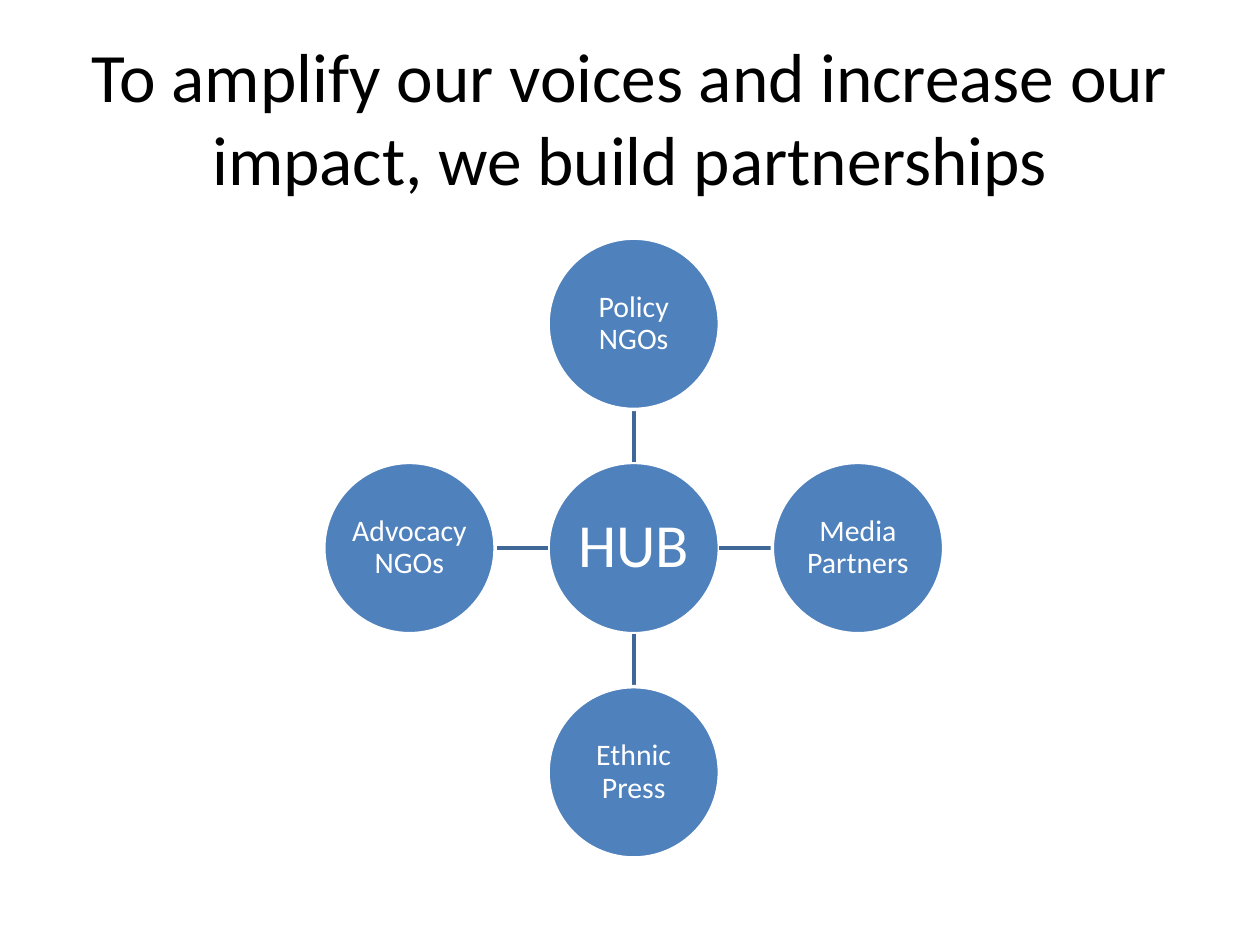
from dataclasses import dataclass

from lxml.etree import SubElement
from pptx import Presentation
from pptx.dml.color import RGBColor
from pptx.enum.shapes import MSO_CONNECTOR as Connector, MSO_SHAPE as Preset
from pptx.enum.text import MSO_ANCHOR as Anchor, PP_ALIGN as Align
from pptx.oxml.ns import qn
from pptx.slide import Slide
from pptx.text.text import TextFrame
from pptx.util import Inches, Pt

BLACK = RGBColor(0x00, 0x00, 0x00)
WHITE = RGBColor(0xFF, 0xFF, 0xFF)
BLUE = RGBColor(0x4F, 0x81, 0xBD)
DARK_BLUE = RGBColor(0x3F, 0x67, 0x97)

HUB_X, HUB_Y = 5.03, 4.35
DIAMETER = 1.36
RADIUS = DIAMETER / 2
PITCH = 1.78
LINE_WIDTH = Pt(2)


@dataclass(frozen=True)
class Node:
    """A circle placed by column and row steps from the hub."""

    label: str
    column: int
    row: int
    size: float = 17
    inset: float = 0.01


HUB = Node("HUB", 0, 0, size=35, inset=0.02)
PARTNERS = (
    Node("Policy NGOs", 0, -1),
    Node("Media Partners", 1, 0),
    Node("Ethnic Press", 0, 1),
    Node("Advocacy NGOs", -1, 0),
)


def write(frame: TextFrame, text: str, size: float, color: RGBColor) -> None:
    """Put one centred paragraph into a wrapping frame."""
    frame.text = text
    frame.word_wrap = True
    frame.vertical_anchor = Anchor.MIDDLE
    para = frame.paragraphs[0]
    para.alignment = Align.CENTER
    font = para.runs[0].font
    font.name, font.size, font.color.rgb = "Calibri", Pt(size), color


def draw_title(page: Slide, text: str) -> None:
    """Draw the heading across the top of the page."""
    box = page.shapes.add_textbox(Inches(0.5), Inches(0.3), Inches(9), Inches(1.25))
    write(box.text_frame, text, 39.6, BLACK)


def draw_node(page: Slide, node: Node) -> None:
    """Draw a labelled circle at its grid position."""
    left = HUB_X + node.column * PITCH - RADIUS
    top = HUB_Y + node.row * PITCH - RADIUS
    circle = page.shapes.add_shape(
        Preset.OVAL, Inches(left), Inches(top), Inches(DIAMETER), Inches(DIAMETER)
    )
    circle.shadow.inherit = False
    circle.fill.solid()
    circle.fill.fore_color.rgb = BLUE
    circle.line.color.rgb = WHITE
    circle.line.width = LINE_WIDTH
    frame = circle.text_frame
    write(frame, node.label, node.size, WHITE)
    frame.paragraphs[0].line_spacing = 0.9
    frame.margin_left = frame.margin_right = Inches(node.inset)
    frame.margin_top = frame.margin_bottom = Inches(node.inset)


def draw_spoke(page: Slide, node: Node) -> None:
    """Draw the line from the hub's edge to a partner's edge."""
    start, end = (
        (Inches(HUB_X + node.column * reach), Inches(HUB_Y + node.row * reach))
        for reach in (RADIUS, PITCH - RADIUS)
    )
    spoke = page.shapes.add_connector(Connector.STRAIGHT, *start, *end)
    spoke.line.color.rgb = DARK_BLUE
    spoke.line.width = LINE_WIDTH
    SubElement(spoke._element.spPr, qn("a:effectLst"))


def main() -> None:
    """Build the partnership slide and save it."""
    deck = Presentation()
    deck.slide_width, deck.slide_height = Inches(10), Inches(7.5)
    page = deck.slides.add_slide(deck.slide_layouts[6])
    draw_title(page, "To amplify our voices and increase our impact, we build partnerships")
    draw_node(page, HUB)
    for partner in PARTNERS:
        draw_spoke(page, partner)
        draw_node(page, partner)
    deck.save("out.pptx")


if __name__ == "__main__":
    main()
